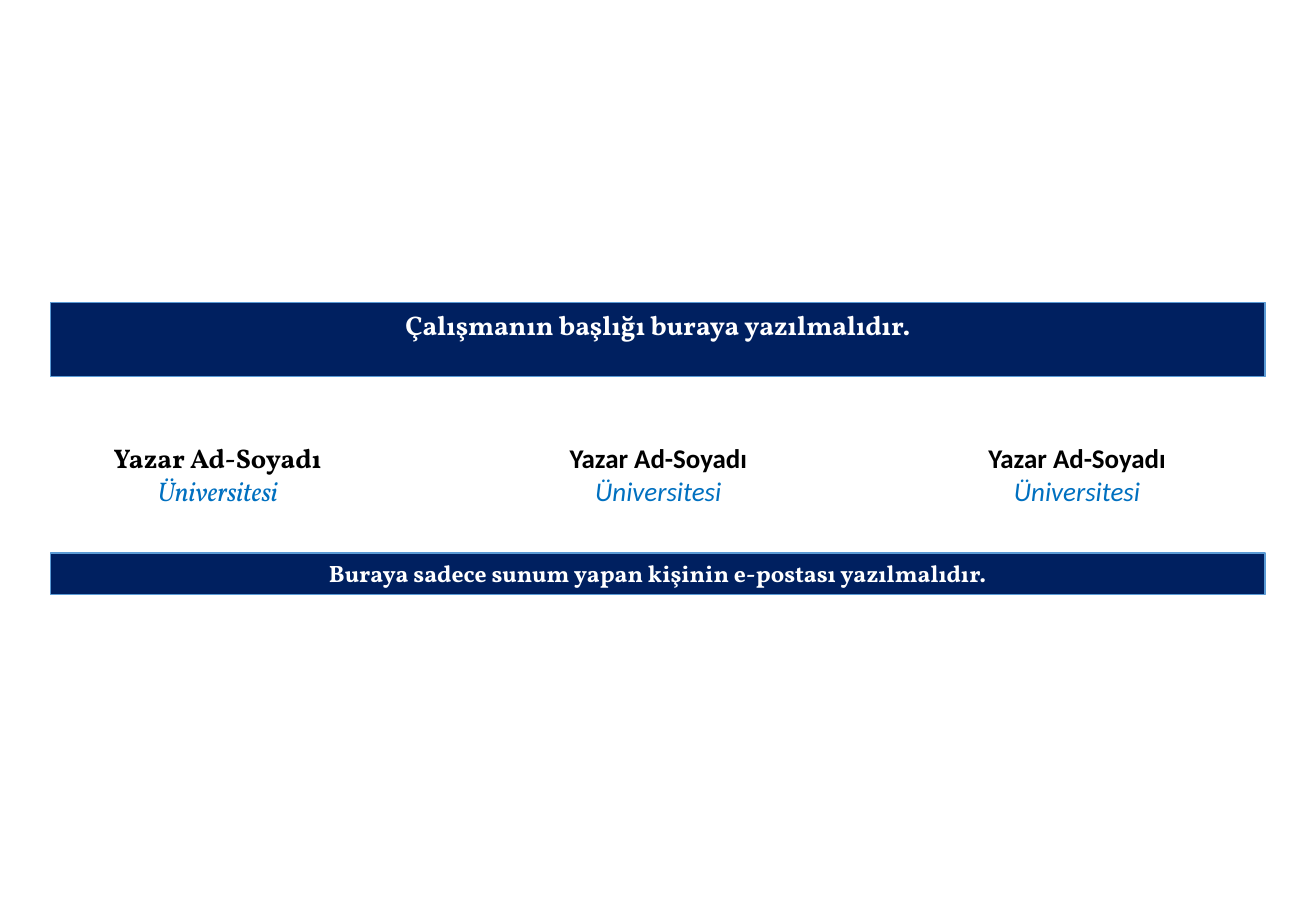
from pptx import Presentation
from pptx.dml.color import RGBColor
from pptx.enum.shapes import MSO_SHAPE
from pptx.enum.text import MSO_ANCHOR, PP_ALIGN
from pptx.util import Pt


def color(code):
    return RGBColor.from_string(code)


class Cover:
    serif, sans = "Vollkorn", "Calibri"
    navy, edge, blue = "002060", "5B9BD5", "0070C0"
    black, white = "000000", "FFFFFF"

    def __init__(self, slide):
        self.slide = slide

    def style(self, para, face, size, tone, bold=False, italic=False):
        para.alignment = PP_ALIGN.CENTER
        for run in para.runs:
            font = run.font
            font.name, font.size = face, Pt(size)
            font.bold, font.italic = bold, italic
            font.color.rgb = color(tone)

    def bar(self, top, height, text, size):
        """Add a full-width navy band with one line of text."""
        shape = self.slide.shapes.add_shape(
            MSO_SHAPE.RECTANGLE, Pt(30), Pt(top), Pt(720), Pt(height))
        shape.shadow.inherit = False
        shape.fill.solid()
        shape.fill.fore_color.rgb = color(self.navy)
        shape.line.color.rgb = color(self.edge)
        shape.line.width = Pt(1)
        frame = shape.text_frame
        frame.word_wrap = True
        frame.vertical_anchor = MSO_ANCHOR.TOP
        frame.text = text
        self.style(frame.paragraphs[0], self.serif, size, self.white, bold=True)

    def author(self, left, width, face):
        """Add a name with the university below it."""
        box = self.slide.shapes.add_textbox(
            Pt(left), Pt(258.3), Pt(width), Pt(46))
        frame = box.text_frame
        frame.word_wrap = True
        frame.text = "Yazar Ad-Soyadı\nÜniversitesi"
        name, school = frame.paragraphs
        self.style(name, face, 16, self.black, bold=True)
        self.style(school, face, 16, self.blue, italic=True)


def main():
    deck = Presentation()
    deck.slide_width, deck.slide_height = Pt(780), Pt(540)
    cover = Cover(deck.slides.add_slide(deck.slide_layouts[6]))
    cover.bar(179.3, 44, "Çalışmanın başlığı buraya yazılmalıdır.", 16)
    for left, width, face in ((0, 258, cover.serif),
                              (248.4, 283.6, cover.sans),
                              (496.8, 283.2, cover.sans)):
        cover.author(left, width, face)
    cover.bar(327.8, 24.6,
              "Buraya sadece sunum yapan kişinin e-postası yazılmalıdır.", 14)
    deck.save("out.pptx")


if __name__ == "__main__":
    main()
